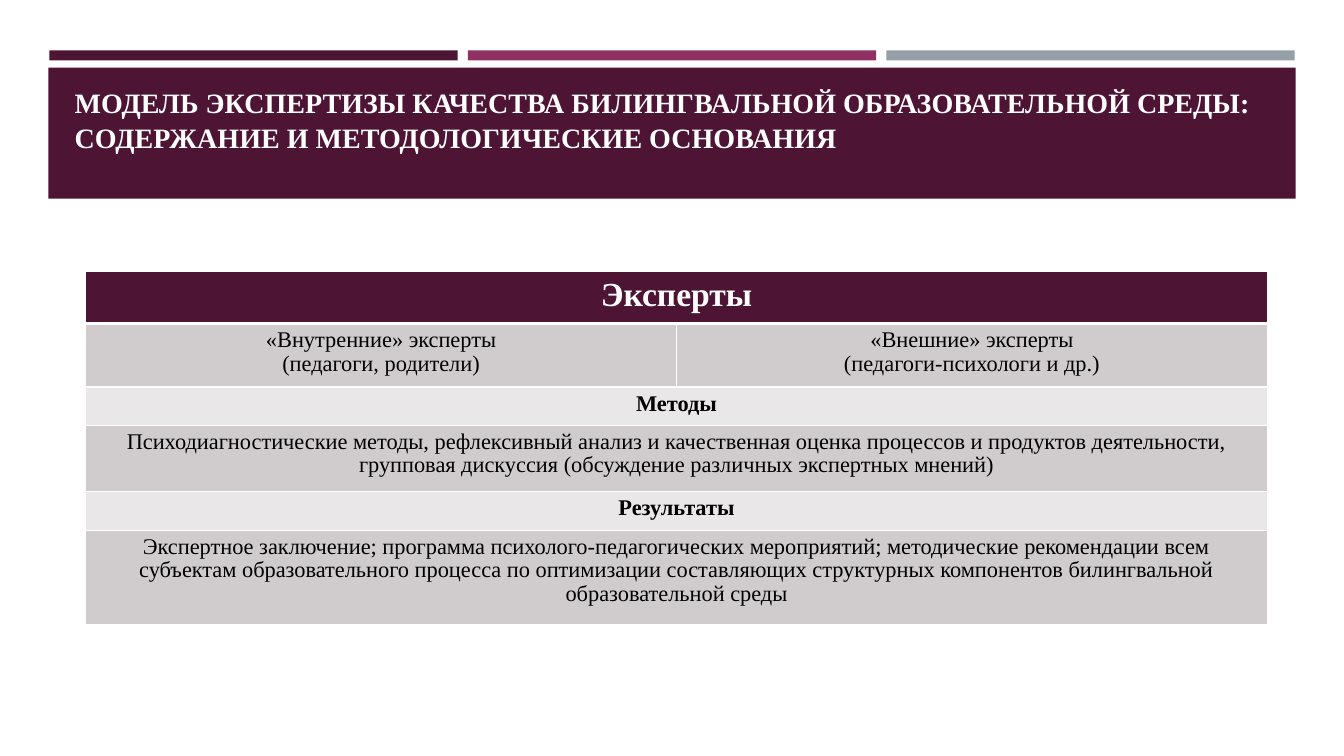
from dataclasses import dataclass

from lxml.etree import SubElement
from pptx import Presentation
from pptx.dml.color import RGBColor
from pptx.enum.shapes import MSO_SHAPE
from pptx.enum.text import MSO_ANCHOR, MSO_AUTO_SIZE, PP_ALIGN
from pptx.oxml.ns import qn
from pptx.util import Inches, Pt


@dataclass(frozen=True)
class Theme:
    font: str = "Times New Roman"
    plum: str = "4D1434"
    magenta: str = "903163"
    steel: str = "969FA7"
    dark_row: str = "D0CCCE"
    light_row: str = "E9E7E8"
    white: str = "FFFFFF"
    black: str = "000000"
    title_size: int = 20
    header_size: int = 24
    body_size: int = 16


THEME = Theme()


def write(frame, text, size=THEME.body_size, color=THEME.black, bold=False,
          align=PP_ALIGN.CENTER, spacing=0.95):
    frame.word_wrap = True
    for index, line in enumerate(text.split("\n")):
        paragraph = frame.add_paragraph() if index else frame.paragraphs[0]
        paragraph.alignment = align
        paragraph.line_spacing = spacing
        paragraph.space_before = paragraph.space_after = Pt(0)
        run = paragraph.add_run()
        run.text = line
        run.font.name = THEME.font
        run.font.size = Pt(size)
        run.font.bold = bold
        run.font.color.rgb = RGBColor.from_string(color)


class SlideBuilder:
    """Draws styled elements on one slide."""

    def __init__(self, slide, theme):
        self.slide = slide
        self.theme = theme

    def bar(self, left, top, width, height, color):
        bar = self.slide.shapes.add_shape(
            MSO_SHAPE.RECTANGLE, Inches(left), Inches(top), Inches(width), Inches(height))
        bar.shadow.inherit = False
        bar.fill.solid()
        bar.fill.fore_color.rgb = RGBColor.from_string(color)
        bar.line.fill.background()

    def title(self, text, left, top, width, height):
        title = self.slide.shapes.title
        title.left, title.top = Inches(left), Inches(top)
        title.width, title.height = Inches(width), Inches(height)
        title.text_frame.auto_size = MSO_AUTO_SIZE.NONE
        title.text_frame.vertical_anchor = MSO_ANCHOR.BOTTOM
        write(title.text_frame, text, size=self.theme.title_size, color=self.theme.white,
              bold=True, align=PP_ALIGN.LEFT, spacing=1.05)
        self.slide.shapes._spTree.append(title._element)

    def borders(self, cell, **widths):
        properties = cell._tc.get_or_add_tcPr()
        for index, side in enumerate("LRTB"):
            line = SubElement(properties, qn(f"a:ln{side}"), w=str(Pt(widths.get(side, 1))))
            fill = SubElement(line, qn("a:solidFill"))
            SubElement(fill, qn("a:srgbClr"), val=self.theme.white)
            properties.insert(index, line)

    def table(self, rows, left, top, width):
        columns = max(len(texts) for _, texts, _, _ in rows)
        height = sum(row[0] for row in rows)
        table = self.slide.shapes.add_table(
            len(rows), columns, Inches(left), Inches(top), Inches(width), Inches(height)).table
        for index, (row_height, texts, fill, style) in enumerate(rows):
            table.rows[index].height = Inches(row_height)
            if len(texts) == 1:
                table.cell(index, 0).merge(table.cell(index, columns - 1))
            for column in range(columns):
                cell = table.cell(index, column)
                cell.fill.solid()
                cell.fill.fore_color.rgb = RGBColor.from_string(fill)
                edges = {0: {"B": 3}, 1: {"T": 3}}.get(index, {})
                self.borders(cell, **edges)
            for column, text in enumerate(texts):
                write(table.cell(index, column).text_frame, text, **style)


def main():
    presentation = Presentation()
    presentation.slide_width, presentation.slide_height = Inches(13.33), Inches(7.5)
    builder = SlideBuilder(presentation.slides.add_slide(presentation.slide_layouts[5]), THEME)

    for index, color in enumerate((THEME.plum, THEME.magenta, THEME.steel)):
        builder.bar(0.49 + index * 4.15, 0.5, 4.05, 0.1, color)
    builder.bar(0.48, 0.67, 12.37, 1.3, THEME.plum)
    builder.title("МОДЕЛЬ ЭКСПЕРТИЗЫ КАЧЕСТВА БИЛИНГВАЛЬНОЙ ОБРАЗОВАТЕЛЬНОЙ СРЕДЫ: "
                  "СОДЕРЖАНИЕ И МЕТОДОЛОГИЧЕСКИЕ ОСНОВАНИЯ", 0.64, 0.77, 12.06, 0.81)

    header = dict(size=THEME.header_size, color=THEME.white, bold=True, spacing=1.0)
    heading = dict(bold=True)
    methods = ("Психодиагностические методы, рефлексивный анализ и качественная оценка "
               "процессов и продуктов деятельности, групповая дискуссия "
               "(обсуждение различных экспертных мнений)")
    results = ("Экспертное заключение; программа психолого-педагогических мероприятий; "
               "методические рекомендации всем субъектам образовательного процесса "
               "по оптимизации составляющих структурных компонентов билингвальной "
               "образовательной среды")
    experts = ["«Внутренние» эксперты\n(педагоги, родители)",
               "«Внешние» эксперты\n(педагоги-психологи и др.)"]
    builder.table([
        (0.52, ["Эксперты"], THEME.plum, header),
        (0.63, experts, THEME.dark_row, {}),
        (0.38, ["Методы"], THEME.light_row, heading),
        (0.66, [methods], THEME.dark_row, {}),
        (0.38, ["Результаты"], THEME.light_row, heading),
        (0.94, [results], THEME.dark_row, {}),
    ], 0.85, 2.69, 11.72)
    presentation.save("out.pptx")


if __name__ == "__main__":
    main()
